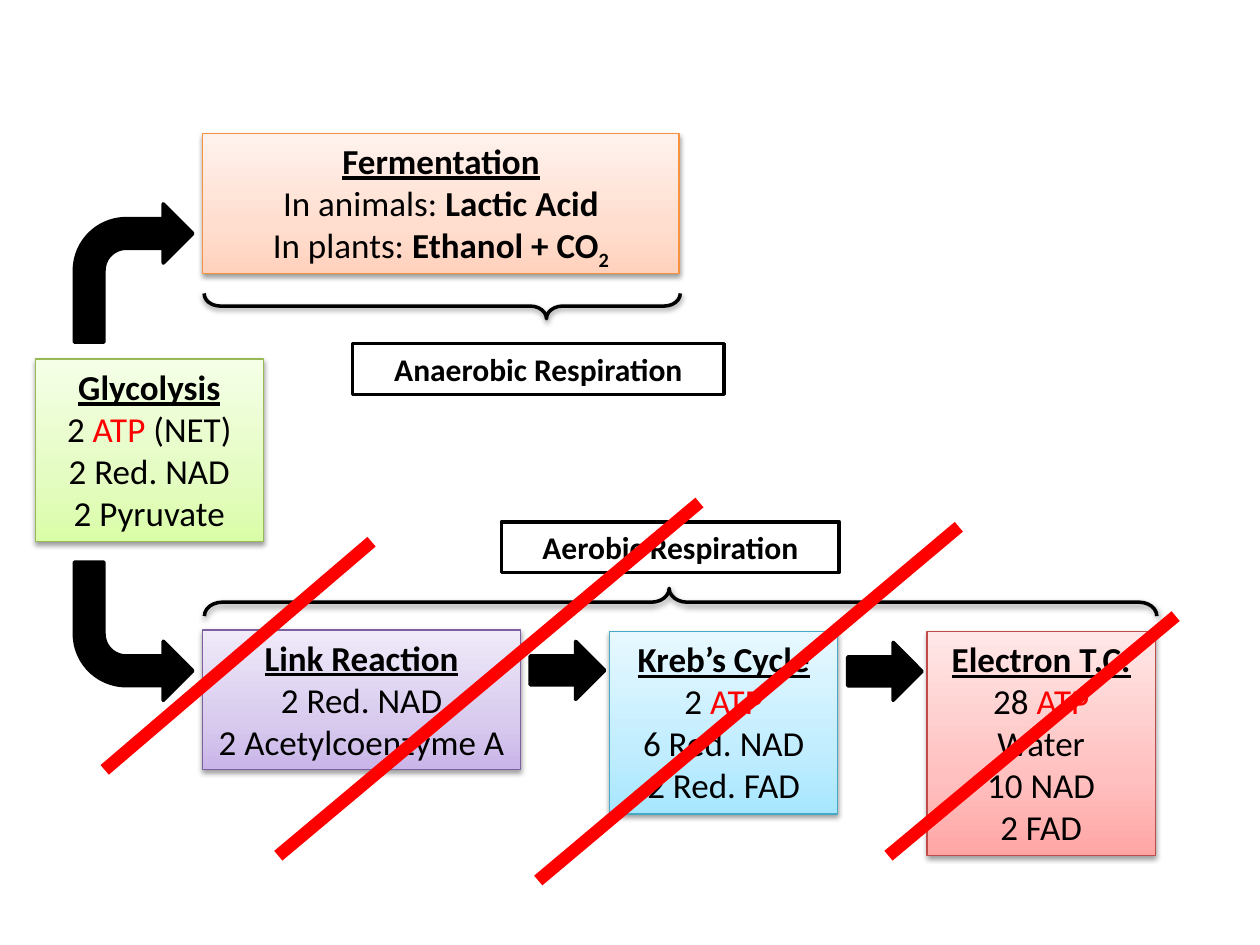
from dataclasses import dataclass
from typing import NamedTuple

from lxml.etree import SubElement
from pptx import Presentation
from pptx.dml.color import RGBColor
from pptx.enum.shapes import MSO_CONNECTOR as Link, MSO_SHAPE as Preset
from pptx.enum.text import MSO_ANCHOR as Anchor, PP_ALIGN as Align
from pptx.oxml.ns import qn
from pptx.util import Cm, Pt

COLORS = {
    "ink": "000000", "paper": "FFFFFF", "red": "FF0000",
    "green line": "98B955", "green": ("DAFDA7", "E4FCC2", "F5FFE7"),
    "purple line": "7D60A0", "purple": ("C9B5E8", "D8CBEE", "F0EAF9"),
    "blue line": "46AAC5", "blue": ("A7E6FF", "C1EDFF", "E7F8FF"),
    "rose line": "BF4C48", "rose": ("FFA6A5", "FFC0BF", "FFE7E7"),
    "orange line": "F69240", "orange": ("FFD2BD", "FFDED0", "FFF2ED"),
}
STOPS = (0, 35, 100)  # percent, from the bottom edge upwards


class Frame(NamedTuple):
    left: float
    top: float
    width: float
    height: float


class Span(NamedTuple):
    text: str
    bold: bool = False
    color: str = "ink"
    underline: bool = False
    baseline: int = 0


@dataclass
class Stage:
    title: str
    frame: Frame
    color: str
    lines: list[list[Span]]


@dataclass
class Label:
    text: str
    frame: Frame


@dataclass
class Arrow:
    kind: Preset
    frame: Frame
    mirrored: bool = False


@dataclass
class Brace:
    frame: Frame
    rotation: int
    tip: float


class Strike(NamedTuple):
    x1: float
    y1: float
    x2: float
    y2: float


ATP = Span("ATP", color="red")
STAGES = [
    Stage("Glycolysis", Frame(0.71, 7.24, 4.6, 3.68), "green",
          [[Span("2 "), ATP, Span(" (NET)")], [Span("2 Red. NAD")], [Span("2 Pyruvate")]]),
    Stage("Link Reaction", Frame(4.09, 12.7, 6.4, 2.82), "purple",
          [[Span("2 Red. NAD")], [Span("2 Acetylcoenzyme A")]]),
    Stage("Kreb’s Cycle", Frame(12.29, 12.73, 4.6, 3.68), "blue",
          [[Span("2 "), ATP], [Span("6 Red. NAD")], [Span("2 Red. FAD")]]),
    Stage("Electron T.C.", Frame(18.69, 12.73, 4.6, 4.52), "rose",
          [[Span("28 "), ATP], [Span("Water")], [Span("10 NAD")], [Span("2 FAD")]]),
    Stage("Fermentation", Frame(4.09, 2.69, 9.6, 2.82), "orange",
          [[Span("In animals: "), Span("Lactic Acid", True)],
           [Span("In plants: "), Span("Ethanol + CO", True),
            Span("2", True, baseline=-25000)]]),
]
ARROWS = [
    Arrow(Preset.BENT_ARROW, Frame(1.5, 11.33, 2.39, 2.79), mirrored=True),
    Arrow(Preset.RIGHT_ARROW, Frame(10.69, 12.93, 1.5, 1.17)),
    Arrow(Preset.RIGHT_ARROW, Frame(17.09, 12.95, 1.5, 1.17)),
    Arrow(Preset.BENT_ARROW, Frame(1.5, 4.11, 2.39, 2.79)),
]
BRACES = [
    Brace(Frame(13.44, 2.54, 0.56, 19.2), 90, 0.512),
    Brace(Frame(8.66, 1.37, 0.51, 9.6), 270, 0.719),
]
LABELS = [
    Label("Aerobic Respiration", Frame(10.11, 10.52, 6.81, 1.02)),
    Label("Anaerobic Respiration", Frame(7.11, 6.93, 7.49, 1.02)),
]
STRIKES = [
    Strike(2.11, 15.52, 7.49, 10.92),
    Strike(5.61, 17.25, 14.1, 10.13),
    Strike(10.85, 17.75, 19.33, 10.62),
    Strike(17.91, 17.25, 23.7, 12.42),
]


def add_preset(page, kind: Preset, frame: Frame, line: str, width: float):
    shape = page.shapes.add_shape(kind, *map(Cm, frame))
    shape.shadow.inherit = False
    shape.line.color.rgb = RGBColor.from_string(COLORS[line])
    shape.line.width = Pt(width)
    return shape


def fill_solid(shape, color: str) -> None:
    shape.fill.solid()
    shape.fill.fore_color.rgb = RGBColor.from_string(COLORS[color])


def fill_gradient(shape, color: str) -> None:
    shape.fill.gradient()
    shape.fill.gradient_angle = 90
    stops = shape.element.spPr.find(qn("a:gradFill")).find(qn("a:gsLst"))
    for stop in list(stops):
        stops.remove(stop)
    for position, value in zip(STOPS, COLORS[color]):
        stop = SubElement(stops, qn("a:gs"), pos=str(position * 1000))
        SubElement(stop, qn("a:srgbClr"), val=value)


def add_shadow(shape) -> None:
    effects = shape.element.spPr.find(qn("a:effectLst"))
    shadow = SubElement(effects, qn("a:outerShdw"), blurRad=str(Pt(3.1)), dist=str(Pt(1.6)),
                        dir="5400000", rotWithShape="0")
    color = SubElement(shadow, qn("a:srgbClr"), val=COLORS["ink"])
    SubElement(color, qn("a:alpha"), val="38000")


def write_lines(shape, lines: list[list[Span]], size: int) -> None:
    box = shape.text_frame
    box.word_wrap = True
    box.vertical_anchor = Anchor.TOP
    for index, spans in enumerate(lines):
        para = box.add_paragraph() if index else box.paragraphs[0]
        para.alignment = Align.CENTER
        for span in spans:
            run = para.add_run()
            run.text = span.text
            formats = {"name": "Calibri", "size": Pt(size),
                       "bold": span.bold, "underline": span.underline}
            for name, value in formats.items():
                setattr(run.font, name, value)
            run.font.color.rgb = RGBColor.from_string(COLORS[span.color])
            if span.baseline:
                run.font._element.set("baseline", str(span.baseline))


def draw_stage(page, stage: Stage) -> None:
    shape = add_preset(page, Preset.RECTANGLE, stage.frame, f"{stage.color} line", 0.75)
    fill_gradient(shape, stage.color)
    add_shadow(shape)
    write_lines(shape, [[Span(stage.title, True, underline=True)], *stage.lines], 20)


def draw_arrow(page, arrow: Arrow) -> None:
    shape = add_preset(page, arrow.kind, arrow.frame, "ink", 2)
    fill_solid(shape, "ink")
    if arrow.mirrored:
        shape.rotation = 180
        shape.element.spPr.xfrm.set("flipH", "1")


def draw_brace(page, brace: Brace) -> None:
    shape = add_preset(page, Preset.LEFT_BRACE, brace.frame, "ink", 2)
    shape.fill.background()
    shape.rotation = brace.rotation
    shape.adjustments[0] = 0.638
    shape.adjustments[1] = brace.tip
    add_shadow(shape)


def draw_label(page, label: Label) -> None:
    shape = add_preset(page, Preset.RECTANGLE, label.frame, "ink", 2)
    fill_solid(shape, "paper")
    write_lines(shape, [[Span(label.text, True)]], 18)


def draw_strike(page, strike: Strike) -> None:
    line = page.shapes.add_connector(Link.STRAIGHT, *map(Cm, strike))
    line.line.color.rgb = RGBColor.from_string(COLORS["red"])
    line.line.width = Pt(7.25)
    SubElement(line._element.spPr, qn("a:effectLst"))


def main() -> None:
    deck = Presentation()
    deck.slide_width, deck.slide_height = Cm(25.4), Cm(19.05)
    page = deck.slides.add_slide(deck.slide_layouts[6])
    # Strikes come last so that they cross out the aerobic stages
    for items, draw in ((STAGES, draw_stage), (ARROWS, draw_arrow), (BRACES, draw_brace),
                        (LABELS, draw_label), (STRIKES, draw_strike)):
        for item in items:
            draw(page, item)
    deck.save("out.pptx")


if __name__ == "__main__":
    main()
